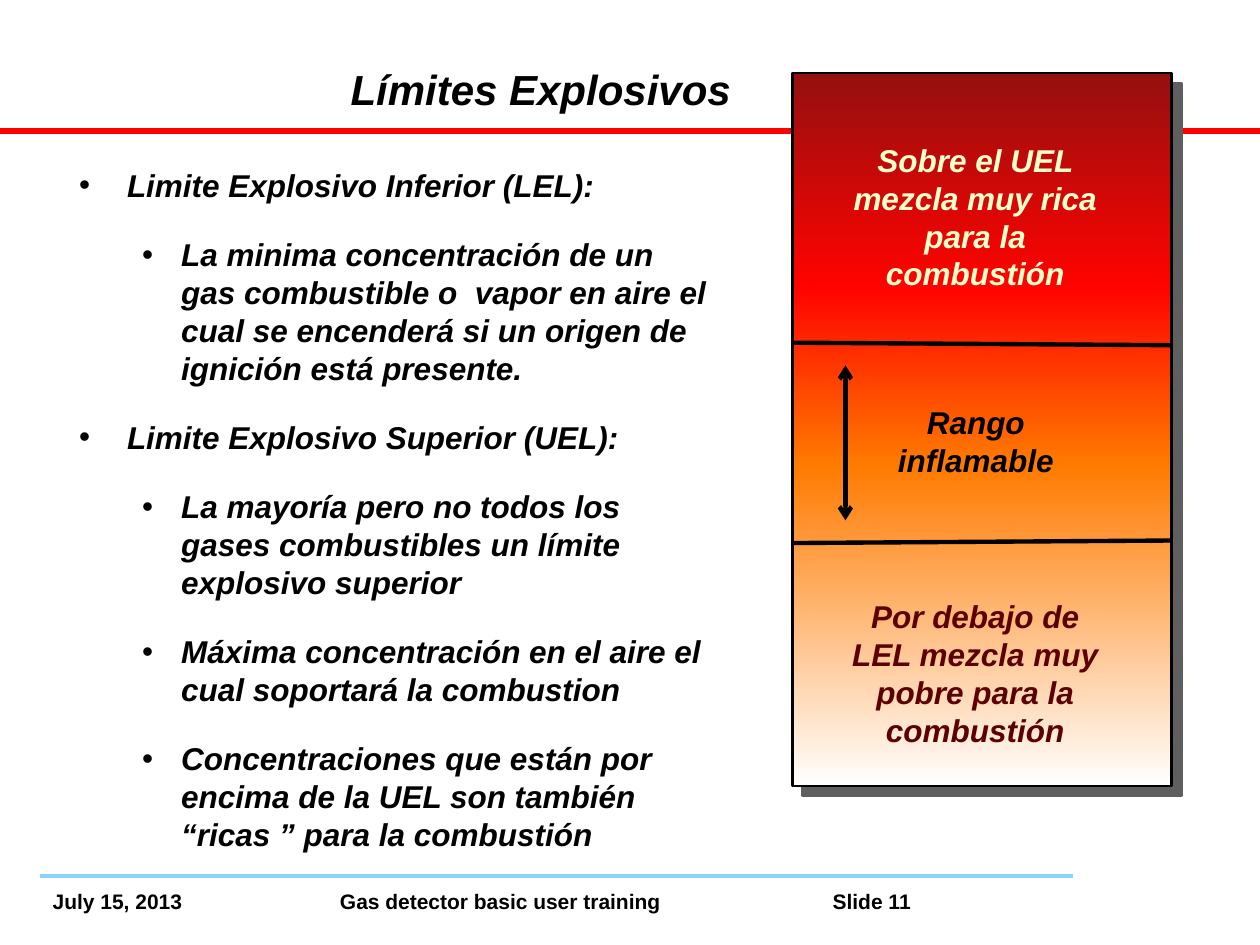
from lxml import etree
from pptx import Presentation
from pptx import util as u
from pptx.dml.color import RGBColor
from pptx.enum import shapes, text
from pptx.oxml import ns

COLORS = {
    "ink": "000000", "rule": "FF0000", "footer": "8ED2FF", "shadow": "5F5F5F",
    "rich": "FFFFCC", "lean": "5C0000",
}
GRADIENT = [(0, "950F0F"), (30, "FF0300"), (55, "FF7A00"), (100, "FFFFFF")]
FONT = "Arial"
TITLE = "Límites Explosivos"
BULLETS = [
    (0, "Limite Explosivo Inferior (LEL):"),
    (1, "La minima concentración de un gas combustible o  vapor en aire el cual "
        "se encenderá si un origen de ignición está presente."),
    (0, "Limite Explosivo Superior (UEL):"),
    (1, "La mayoría pero no todos los gases combustibles un límite explosivo superior"),
    (1, "Máxima concentración en el aire el cual soportará la combustion"),
    (1, "Concentraciones que están por encima de la UEL son también “ricas ” para la combustión"),
]
INDENTS = [(0.38, -0.38), (0.81, -0.31)]
ZONES = [
    ("Sobre el UEL mezcla muy rica para la combustión", "rich", (6.62, 1.07, 2.24, 1.31)),
    ("Rango inflamable", "ink", (6.71, 3.15, 2.07, 0.71)),
    ("Por debajo de LEL mezcla muy pobre para la combustión", "lean", (6.62, 4.69, 2.24, 1.31)),
]
FOOTER = ["July 15, 2013", "Gas detector basic user training"]
FOOTER_TAB = 2.28
PAGE_LABEL = "Slide 11"
PANEL = (6.29, 0.58, 3.01, 5.66)
PANEL_RIGHT = PANEL[0] + PANEL[2]
DIVIDERS = [(2.72, 2.74), (4.31, 4.29)]

deck = Presentation()
deck.slide_width, deck.slide_height = u.Inches(10), u.Inches(7.5)
page = deck.slides.add_slide(deck.slide_layouts[6])


def color(name):
    return RGBColor.from_string(COLORS[name])


def child(parent, tag, **attributes):
    element = etree.SubElement(parent, ns.qn(tag))
    for key, value in attributes.items():
        element.set(key, str(value))
    return element


def add_box(place, anchor=text.MSO_ANCHOR.TOP):
    frame = page.shapes.add_textbox(*map(u.Inches, place)).text_frame
    frame.word_wrap = True
    frame.vertical_anchor = anchor
    return frame


def add_span(para, words, size, ink="ink", italic=True):
    span = para.add_run()
    span.text = words
    font = span.font
    font.name, font.size, font.bold, font.italic = FONT, u.Pt(size), True, italic
    font.color.rgb = color(ink)


def add_line(start, end, ink, width, arrows=False):
    line = page.shapes.add_connector(
        shapes.MSO_CONNECTOR.STRAIGHT, *map(u.Inches, start + end))
    line.line.color.rgb = color(ink)
    line.line.width = u.Pt(width)
    if arrows:
        stroke = line.line._get_or_add_ln()
        child(stroke, "a:headEnd", type="arrow")
        child(stroke, "a:tailEnd", type="arrow")
    child(line._element.spPr, "a:effectLst")


def add_panel():
    panel = page.shapes.add_shape(shapes.MSO_SHAPE.RECTANGLE, *map(u.Inches, PANEL))
    panel.line.color.rgb = color("ink")
    panel.line.width = u.Pt(1.5)
    panel.fill.gradient()
    panel.fill.gradient_angle = 270
    stops = panel._element.spPr.find(ns.qn("a:gradFill")).find(ns.qn("a:gsLst"))
    for stop in list(stops):
        stops.remove(stop)
    for share, shade in GRADIENT:
        child(child(stops, "a:gs", pos=share * 1000), "a:srgbClr", val=shade)
    effects = child(panel._element.spPr, "a:effectLst")
    shadow = child(effects, "a:outerShdw", dist=u.Pt(8), dir=45 * 60000,
                   algn="ctr", rotWithShape=0)
    child(shadow, "a:srgbClr", val=COLORS["shadow"])


def add_bullets():
    frame = add_box((0.53, 1.27, 5.22, 5.33))
    for index, (level, words) in enumerate(BULLETS):
        para = frame.paragraphs[0] if index == 0 else frame.add_paragraph()
        para.level = level
        para.space_after = u.Pt(18)
        margin, indent = INDENTS[level]
        settings = para._p.get_or_add_pPr()
        settings.set("marL", str(u.Inches(margin)))
        settings.set("indent", str(u.Inches(indent)))
        child(child(settings, "a:buClr"), "a:srgbClr", val=COLORS["ink"])
        child(settings, "a:buFont", typeface=FONT)
        child(settings, "a:buChar", char="•")
        add_span(para, words, 18)


def add_footer():
    para = add_box((0.32, 7, 6.1, 0.3)).paragraphs[0]
    tabs = child(para._p.get_or_add_pPr(), "a:tabLst")
    child(tabs, "a:tab", pos=u.Inches(FOOTER_TAB), algn="l")
    add_span(para, "\t".join(FOOTER), 12, italic=False)
    label = add_box((6.51, 7, 1.23, 0.3)).paragraphs[0]
    add_span(label, PAGE_LABEL, 12, italic=False)
    add_line((0.32, 6.95), (8.52, 6.95), "footer", 2.5)


add_footer()
title = add_box((2.65, 0.29, 3.25, 0.83), text.MSO_ANCHOR.MIDDLE).paragraphs[0]
title.alignment = text.PP_ALIGN.RIGHT
add_span(title, TITLE, 24)
add_bullets()
add_line((0, 1.04), (10, 1.04), "rule", 3)
add_panel()
for left_y, right_y in DIVIDERS:
    add_line((PANEL[0], left_y), (PANEL_RIGHT, right_y), "ink", 2.5)
add_line((6.71, 2.9), (6.71, 4.13), "ink", 2.5, arrows=True)
for words, ink, place in ZONES:
    para = add_box(place).paragraphs[0]
    para.alignment = text.PP_ALIGN.CENTER
    add_span(para, words, 18, ink)

deck.save("out.pptx")
